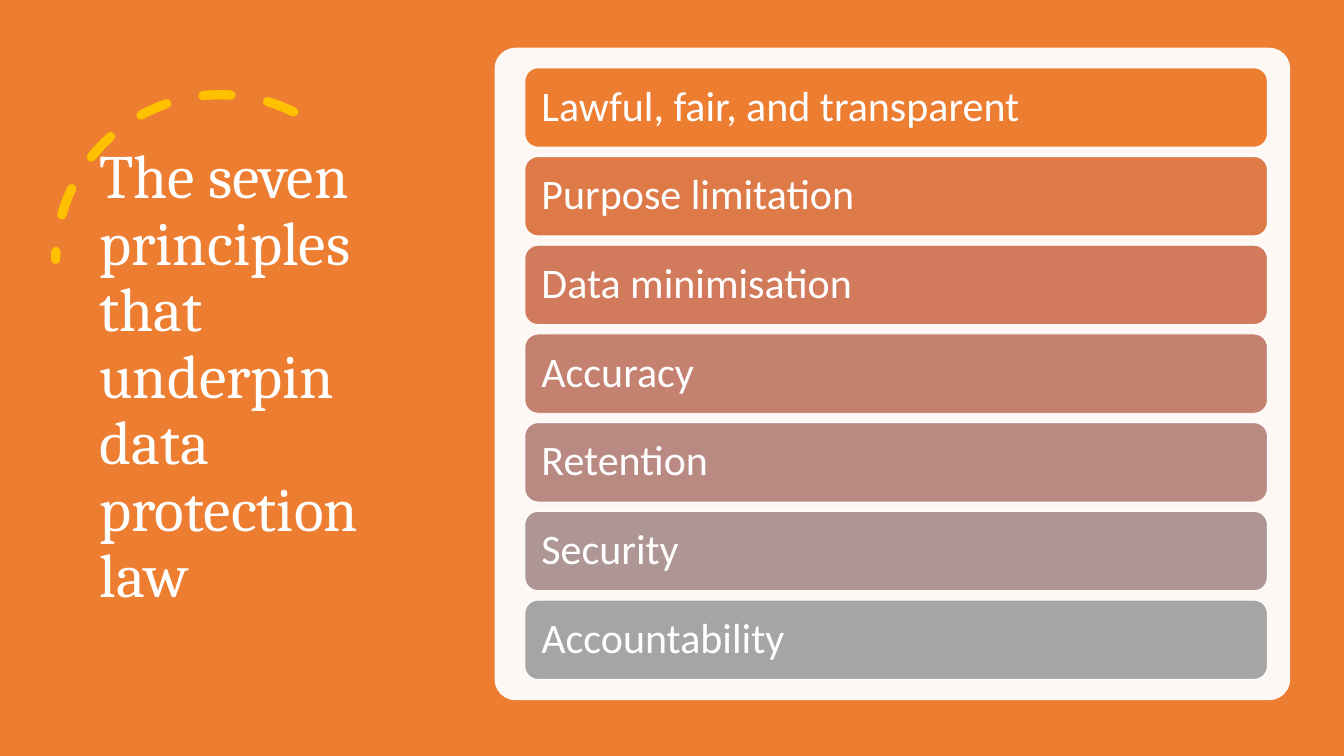
import pptx
import pptx.dml.color
import pptx.enum.dml
import pptx.enum.shapes
import pptx.enum.text
import pptx.oxml
import pptx.oxml.ns
import pptx.util

Inches = pptx.util.Inches
Shapes = pptx.enum.shapes.MSO_SHAPE

COLORS = {"orange": "ED7D31", "gold": "FFC000", "white": "FFFFFF"}
TITLE = "The seven principles that underpin data protection law"
PRINCIPLES = [
    ("Lawful, fair, and transparent", "ED7D31"),
    ("Purpose limitation", "DE7A47"),
    ("Data minimisation", "D17B5C"),
    ("Accuracy", "C48170"),
    ("Retention", "B98A82"),
    ("Security", "AE9694"),
    ("Accountability", "A5A5A5"),
]
TITLE_FONT = {"name": "Cambria", "size": pptx.util.Pt(66)}
BAR_FONT = {"name": "Calibri", "size": pptx.util.Pt(45)}
BAR_LEFT, BAR_TOP, BAR_WIDTH, BAR_HEIGHT = 7.81, 1.01, 11.05, 1.18
BAR_STEP = 1.32
BAR_INSET = 0.19


def rgb(color):
    return pptx.dml.color.RGBColor.from_string(color)


def add_shape(page, kind, place, fill=None, line=None, width=1):
    shape = page.shapes.add_shape(kind, *map(Inches, place))
    shape.shadow.inherit = False
    if fill:
        shape.fill.solid()
        shape.fill.fore_color.rgb = rgb(fill)
    else:
        shape.fill.background()
    if line:
        shape.line.color.rgb = rgb(line)
        shape.line.width = pptx.util.Pt(width)
    else:
        shape.line.fill.background()
    return shape


def write_text(box, text, font, inset_x, inset_y):
    frame = box.text_frame
    settings = {
        "word_wrap": True,
        "vertical_anchor": pptx.enum.text.MSO_ANCHOR.MIDDLE,
        "margin_left": Inches(inset_x),
        "margin_right": Inches(inset_x),
        "margin_top": Inches(inset_y),
        "margin_bottom": Inches(inset_y),
    }
    for name, value in settings.items():
        setattr(frame, name, value)
    para = frame.paragraphs[0]
    para.alignment = pptx.enum.text.PP_ALIGN.LEFT
    para.line_spacing = 0.9
    span = para.add_run()
    span.text = text
    for name, value in font.items():
        setattr(span.font, name, value)
    span.font.color.rgb = rgb(COLORS["white"])


def add_dashed_arc(page):
    arc = add_shape(page, Shapes.ARC, (0.83, 1.41, 4.9, 4.9), line=COLORS["gold"], width=10)
    arc.adjustments[0] = 146.129
    arc.adjustments[1] = 0
    arc.line.dash_style = pptx.enum.dml.MSO_LINE.DASH
    properties = arc.element.spPr
    properties.find(pptx.oxml.ns.qn("a:xfrm")).set("flipH", "1")
    properties.find(pptx.oxml.ns.qn("a:ln")).set("cap", "rnd")


def add_panel(page):
    panel = add_shape(page, Shapes.ROUNDED_RECTANGLE, (7.36, 0.71, 11.84, 9.71), COLORS["white"])
    panel.adjustments[0] = 0.032
    color = panel.element.spPr.find(".//" + pptx.oxml.ns.qn("a:srgbClr"))
    alpha = pptx.oxml.parse_xml(f'<a:alpha {pptx.oxml.ns.nsdecls("a")} val="95000"/>')
    color.append(alpha)


def main():
    deck = pptx.Presentation()
    deck.slide_width, deck.slide_height = Inches(20), Inches(11.25)
    page = deck.slides.add_slide(deck.slide_layouts[6])

    add_shape(page, Shapes.RECTANGLE, (0, 0, 20, 11.25), COLORS["orange"])
    add_dashed_arc(page)
    title = page.shapes.add_textbox(*map(Inches, (1.38, 1.06, 4.84, 9.14)))
    write_text(title, TITLE, TITLE_FONT, 0.1, 0.05)

    add_panel(page)
    for index, (principle, color) in enumerate(PRINCIPLES):
        place = (BAR_LEFT, BAR_TOP + index * BAR_STEP, BAR_WIDTH, BAR_HEIGHT)
        bar = add_shape(page, Shapes.ROUNDED_RECTANGLE, place, color, COLORS["white"])
        write_text(bar, principle, BAR_FONT, BAR_INSET, BAR_INSET)

    deck.save("out.pptx")


if __name__ == "__main__":
    main()
